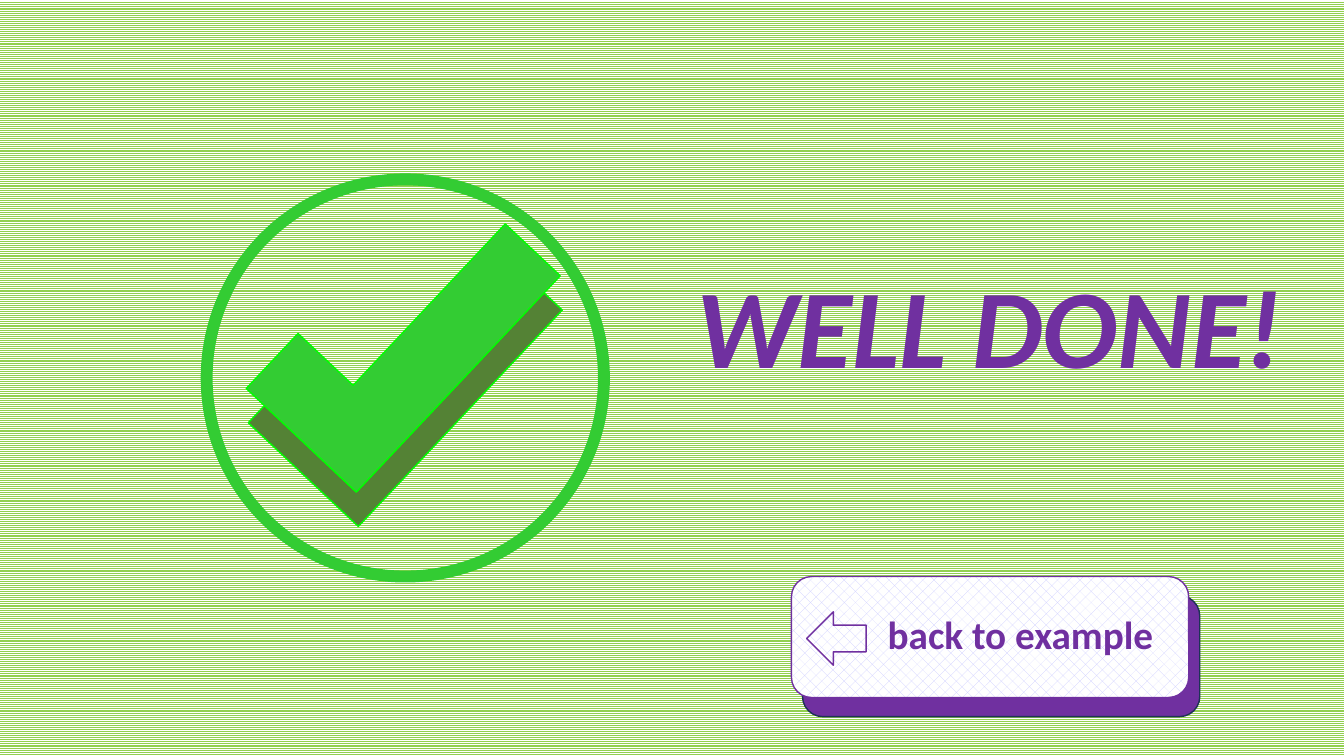
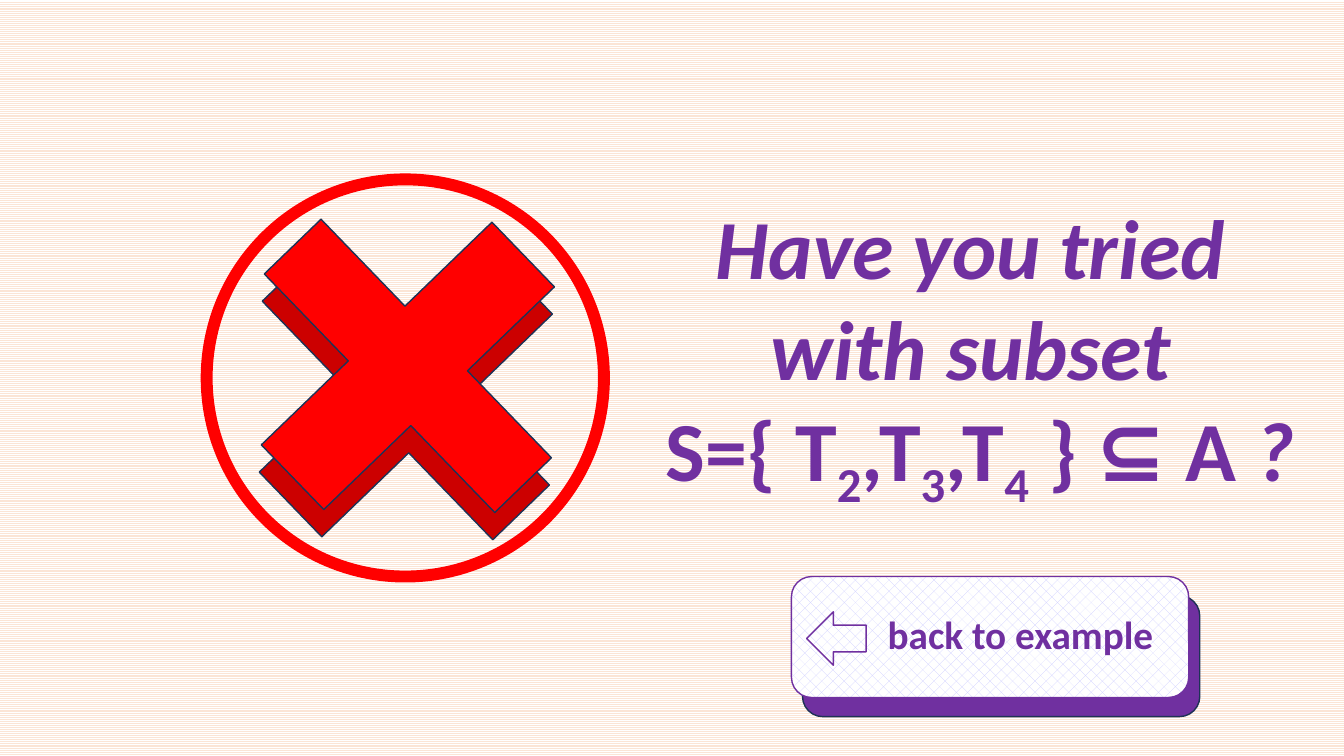
from lxml import etree
from pptx import Presentation
from pptx.dml.color import RGBColor
from pptx.enum.dml import MSO_PATTERN as Pattern
from pptx.enum.shapes import MSO_SHAPE as Shape
from pptx.enum.text import MSO_ANCHOR as Anchor
from pptx.enum.text import MSO_AUTO_SIZE as AutoSize
from pptx.enum.text import PP_ALIGN as Align
from pptx.oxml.ns import qn
from pptx.util import Inches, Pt

PURPLE = RGBColor(0x70, 0x30, 0xA0)
LAVENDER = RGBColor(0xCC, 0xCC, 0xFF)
NAVY = RGBColor(0x1E, 0x32, 0x56)
WHITE = RGBColor(0xFF, 0xFF, 0xFF)
LIME = RGBColor(0x92, 0xD0, 0x50)
PEACH = RGBColor(0xFB, 0xE5, 0xD6)
GREEN = RGBColor(0x33, 0xCC, 0x33)
BRIGHT_GREEN = RGBColor(0x00, 0xFF, 0x00)
OLIVE = RGBColor(0x54, 0x82, 0x35)
RED = RGBColor(0xFF, 0x00, 0x00)
DARK_RED = RGBColor(0xCC, 0x00, 0x00)

FONT = "Calibri"
SUBSCRIPT = "-25000"


def set_pattern(fill, pattern, color):
    fill.patterned()
    fill.pattern = pattern
    fill.fore_color.rgb = color
    fill.back_color.rgb = WHITE


class FeedbackDeck:
    """Holds the shared style and the slide being built."""

    def __init__(self):
        self.deck = Presentation()
        self.deck.slide_width = Inches(13.33)
        self.deck.slide_height = Inches(7.5)
        self.page = None

    def add_page(self, stripe_color):
        self.page = self.deck.slides.add_slide(self.deck.slide_layouts[6])
        set_pattern(self.page.background.fill, Pattern.LIGHT_HORIZONTAL, stripe_color)

    def add_shape(self, kind, at, line, fill=None, width=1):
        shape = self.page.shapes.add_shape(kind, *map(Inches, at))
        shape.shadow.inherit = False
        if fill is None:
            shape.fill.background()
        else:
            shape.fill.solid()
            shape.fill.fore_color.rgb = fill
        shape.line.color.rgb = line
        shape.line.width = Pt(width)
        return shape

    def add_ring(self, color):
        self.add_shape(Shape.FLOWCHART_CONNECTOR, (2.05, 1.78, 3.94, 3.94), color, width=8.5)

    def add_tick(self, left, top, fill):
        tick = self.add_shape(Shape.CORNER, (left, top, 1.5, 2.95), BRIGHT_GREEN, fill)
        tick.rotation = 43.3
        tick._element.spPr.find(qn("a:xfrm")).set("flipH", "1")

    def add_cross(self, left, top, fill):
        cross = self.add_shape(Shape.CROSS, (left, top, 3.29, 3.18), NAVY, fill)
        cross.rotation = 46
        cross.adjustments[0] = 0.377

    def add_span(self, para, text, size, italic=False, subscript=False):
        """Add a bold purple run; italic runs also get a purple outline."""
        span = para.add_run()
        span.text = text
        font = span.font
        font.name, font.size, font.bold, font.italic = FONT, Pt(size), True, italic
        font.color.rgb = PURPLE
        properties = span._r.get_or_add_rPr()
        if subscript:
            properties.set("baseline", SUBSCRIPT)
        if italic:
            outline = etree.Element(qn("a:ln"), w=str(Pt(1)))
            solid = etree.SubElement(outline, qn("a:solidFill"))
            etree.SubElement(solid, qn("a:srgbClr"), val=str(PURPLE))
            properties.insert(0, outline)

    def add_message(self, at, size, lines):
        """Each line is a list of (text, style) pairs."""
        box = self.page.shapes.add_textbox(*map(Inches, at))
        frame = box.text_frame
        frame.word_wrap = False
        frame.auto_size = AutoSize.SHAPE_TO_FIT_TEXT
        for index, line in enumerate(lines):
            para = frame.add_paragraph() if index else frame.paragraphs[0]
            para.alignment = Align.CENTER
            for text, style in line:
                self.add_span(para, text, size, **style)

    def add_back_button(self):
        self.add_shape(Shape.ROUNDED_RECTANGLE, (7.96, 5.91, 3.94, 1.2), NAVY, PURPLE)
        button = self.add_shape(Shape.ROUNDED_RECTANGLE, (7.85, 5.72, 3.94, 1.2), PURPLE)
        set_pattern(button.fill, Pattern.PERCENT_25, LAVENDER)
        frame = button.text_frame
        frame.word_wrap = True
        frame.vertical_anchor = Anchor.MIDDLE
        frame.margin_left = Inches(0.7)
        para = frame.paragraphs[0]
        para.alignment = Align.CENTER
        para.line_spacing = 0.9
        para.space_before = Pt(10)
        self.add_span(para, "back to example", 28)
        self.add_shape(Shape.LEFT_ARROW, (8, 6.07, 0.59, 0.53), PURPLE)


def main():
    upright, slanted = {}, {"italic": True}
    subscript = {"subscript": True}
    feedback = FeedbackDeck()

    feedback.add_page(LIME)
    feedback.add_tick(3.27, 2.16, OLIVE)
    feedback.add_message((6.78, 2.5, 6.07, 1.45), 80, [[("WELL DONE!", slanted)]])
    feedback.add_ring(GREEN)
    feedback.add_tick(3.25, 1.82, GREEN)
    feedback.add_back_button()

    feedback.add_page(PEACH)
    subset = [("S={ T", upright), ("2", subscript), (",T", upright), ("3", subscript),
              (",T", upright), ("4", subscript), (" } ⊆ A ", upright), ("?", slanted)]
    feedback.add_message((6.46, 1.89, 6.52, 3.13), 60, [
        [("Have you tried ", slanted)],
        [("with subset ", slanted)],
        subset,
    ])
    feedback.add_ring(RED)
    feedback.add_cross(2.38, 2.31, DARK_RED)
    feedback.add_cross(2.4, 2.04, RED)
    feedback.add_back_button()

    feedback.deck.save("out.pptx")


if __name__ == "__main__":
    main()
